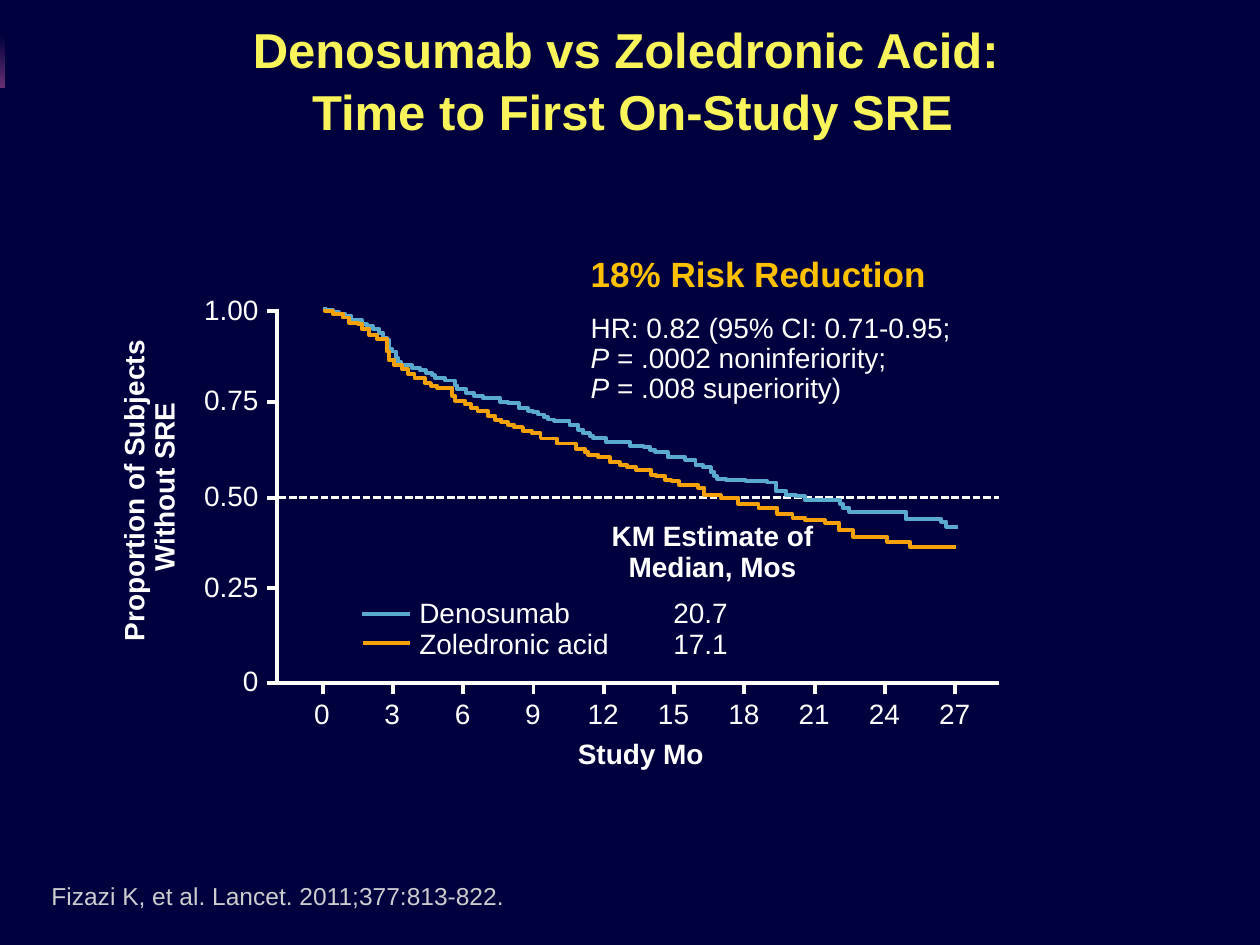
import pptx
import pptx.dml.color
import pptx.enum.dml
import pptx.enum.shapes
import pptx.enum.text
import pptx.oxml
import pptx.util
from pptx.util import Inches

RGBColor = pptx.dml.color.RGBColor
NAVY = RGBColor(0x00, 0x00, 0x3E)
PURPLE = RGBColor(0x68, 0x2E, 0x73)
YELLOW = RGBColor(0xF8, 0xF4, 0x5A)
GOLD = RGBColor(0xFF, 0xC0, 0x00)
WHITE = RGBColor(0xFF, 0xFF, 0xFF)
GRAY = RGBColor(0xCD, 0xCD, 0xCF)
BLUE = RGBColor(0x5A, 0xAA, 0xCE)
ORANGE = RGBColor(0xF6, 0xA1, 0x08)
LEFT = pptx.enum.text.PP_ALIGN.LEFT
CENTER = pptx.enum.text.PP_ALIGN.CENTER
RIGHT = pptx.enum.text.PP_ALIGN.RIGHT

AXIS_X, AXIS_Y, AXIS_END = 2.2, 5.42, 7.93
FIRST_TICK, TICK_STEP = 2.56, 0.558
PROPORTIONS = [("1.00", 2.47), ("0.75", 3.19), ("0.50", 3.95), ("0.25", 4.67), ("0", AXIS_Y)]
MONTHS = range(0, 28, 3)

DENOSUMAB_DROPS = [
    (2.58, 2.46), (2.64, 2.48), (2.69, 2.49), (2.74, 2.51), (2.79, 2.54), (2.87, 2.57),
    (2.91, 2.59), (2.96, 2.61), (3.01, 2.64), (3.04, 2.68), (3.07, 2.7), (3.09, 2.77),
    (3.11, 2.79), (3.14, 2.84), (3.16, 2.87), (3.18, 2.9), (3.27, 2.92), (3.33, 2.94),
    (3.38, 2.96), (3.43, 2.98), (3.45, 3), (3.53, 3.02), (3.61, 3.06), (3.63, 3.09),
    (3.7, 3.12), (3.76, 3.14), (3.83, 3.16), (3.97, 3.19), (4.03, 3.2), (4.12, 3.24),
    (4.19, 3.26), (4.23, 3.27), (4.27, 3.29), (4.32, 3.31), (4.35, 3.33), (4.4, 3.34),
    (4.52, 3.37), (4.59, 3.41), (4.63, 3.44), (4.68, 3.46), (4.71, 3.48), (4.81, 3.51),
    (5, 3.54), (5.11, 3.55), (5.16, 3.57), (5.2, 3.59), (5.3, 3.63), (5.44, 3.65),
    (5.52, 3.69), (5.58, 3.71), (5.64, 3.75), (5.67, 3.78), (5.69, 3.8), (5.76, 3.81),
    (5.92, 3.82), (6.09, 3.83), (6.16, 3.9), (6.24, 3.93), (6.32, 3.94), (6.39, 3.97),
    (6.67, 4), (6.69, 4.03), (6.74, 4.06), (7.19, 4.12), (7.47, 4.14), (7.51, 4.18),
]
ZOLEDRONIC_DROPS = [
    (2.58, 2.47), (2.64, 2.49), (2.72, 2.52), (2.77, 2.56), (2.84, 2.57), (2.87, 2.61),
    (2.93, 2.66), (2.99, 2.69), (3.07, 2.79), (3.09, 2.86), (3.13, 2.9), (3.19, 2.93),
    (3.24, 2.97), (3.29, 3), (3.37, 3.04), (3.42, 3.06), (3.47, 3.08), (3.59, 3.14),
    (3.61, 3.18), (3.69, 3.21), (3.74, 3.24), (3.79, 3.26), (3.87, 3.3), (3.93, 3.33),
    (3.98, 3.35), (4.03, 3.37), (4.08, 3.39), (4.15, 3.42), (4.22, 3.44), (4.29, 3.48),
    (4.42, 3.52), (4.57, 3.56), (4.64, 3.59), (4.67, 3.61), (4.75, 3.63), (4.84, 3.67),
    (4.92, 3.69), (4.98, 3.71), (5.05, 3.73), (5.17, 3.77), (5.21, 3.78), (5.28, 3.81),
    (5.33, 3.82), (5.39, 3.85), (5.54, 3.87), (5.59, 3.93), (5.72, 3.95), (5.86, 4),
    (6.02, 4.03), (6.17, 4.08), (6.29, 4.11), (6.39, 4.13), (6.55, 4.15), (6.66, 4.21),
    (6.77, 4.26), (7.04, 4.3), (7.22, 4.34),
]


class SlideBuilder:
    font_name = "Arial"
    font_size = 16
    line_width = 2.25

    def __init__(self, page):
        self.page = page

    def style(self, para, size, color, bold=False, align=LEFT, spacing=0.9):
        para.alignment = align
        para.line_spacing = spacing
        para.font.name = self.font_name
        para.font.size = pptx.util.Pt(size)
        para.font.bold = bold
        para.font.color.rgb = color

    def text(self, left, top, width, height, words, size=font_size, color=WHITE,
             bold=False, align=LEFT, spacing=0.9, wrap=False):
        box = self.page.shapes.add_textbox(*map(Inches, (left, top, width, height)))
        box.text_frame.word_wrap = wrap
        para = box.text_frame.paragraphs[0]
        para.text = words
        self.style(para, size, color, bold, align, spacing)
        return box

    def line(self, start, end, color=WHITE, width=line_width, dash=None):
        line = self.page.shapes.add_connector(
            pptx.enum.shapes.MSO_CONNECTOR.STRAIGHT, *map(Inches, (*start, *end)))
        line.line.color.rgb = color
        line.line.width = pptx.util.Pt(width)
        if dash:
            line.line.dash_style = dash
        line._element.spPr.append(pptx.oxml.parse_xml(
            '<a:effectLst xmlns:a="http://schemas.openxmlformats.org/drawingml/2006/main"/>'))

    def gradient_band(self, left, top, width, height):
        band = self.page.shapes.add_shape(
            pptx.enum.shapes.MSO_SHAPE.RECTANGLE, *map(Inches, (left, top, width, height)))
        band.shadow.inherit = False
        band.line.fill.background()
        band.fill.gradient()
        band.fill.gradient_angle = 90
        for stop, position, color in zip(band.fill.gradient_stops, (0, 0.6), (PURPLE, NAVY)):
            stop.position = position
            stop.color.rgb = color

    def survival_curve(self, start, drops, end_x, color):
        level = start[1]
        points = []
        for x, lower in drops:
            points += [(x, level), (x, lower)]
            level = lower
        points.append((end_x, level))
        outline = self.page.shapes.build_freeform(Inches(start[0]), Inches(start[1]))
        outline.add_line_segments([(Inches(x), Inches(y)) for x, y in points], close=False)
        curve = outline.convert_to_shape()
        curve.shadow.inherit = False
        curve.fill.background()
        curve.line.color.rgb = color
        curve.line.width = pptx.util.Pt(self.line_width)

    def risk_summary(self):
        box = self.text(4.59, 1.99, 3.1, 1.31, "18% Risk Reduction", 20, GOLD, True)
        box.text_frame.paragraphs[0].space_after = pptx.util.Pt(5)
        para = box.text_frame.add_paragraph()
        para.space_before = pptx.util.Pt(6)
        para.add_run().text = "HR: 0.82 (95% CI: 0.71-0.95;"
        for result in (" = .0002 noninferiority;", " = .008 superiority)"):
            para.add_line_break()
            span = para.add_run()
            span.text = "P"
            span.font.italic = True
            para.add_run().text = result
        self.style(para, self.font_size, WHITE)


def main():
    deck = pptx.Presentation()
    deck.slide_width, deck.slide_height = Inches(10), Inches(7.5)
    page = deck.slides.add_slide(deck.slide_layouts[6])
    page.background.fill.solid()
    page.background.fill.fore_color.rgb = NAVY
    builder = SlideBuilder(page)

    builder.gradient_band(0, 0, 10, 0.7)
    title = builder.text(0.04, 0.02, 9.96, 1.21,
                         "Denosumab vs Zoledronic Acid: \vTime to First On-Study SRE",
                         28, YELLOW, True, CENTER, 1.05, True)
    title.text_frame.vertical_anchor = pptx.enum.text.MSO_ANCHOR.MIDDLE
    title.fill.solid()
    title.fill.fore_color.rgb = NAVY

    builder.line((AXIS_X, 2.45), (AXIS_X, 5.44))
    builder.line((AXIS_X - 0.01, AXIS_Y), (AXIS_END, AXIS_Y))
    for label, y in PROPORTIONS:
        builder.line((2.12, y), (2.18, y))
        builder.text(1.51, y - 0.17, 0.64, 0.34, label, align=RIGHT)
    for index, month in enumerate(MONTHS):
        x = FIRST_TICK + index * TICK_STEP
        builder.line((x, 5.44), (x, 5.51))
        builder.text(x - 0.23, 5.51, 0.45, 0.34, str(month), align=CENTER)

    axis_title = builder.text(-0.14, 3.57, 2.68, 0.59, "Proportion of Subjects \vWithout SRE",
                              bold=True, align=CENTER)
    axis_title.rotation = 270
    builder.text(2.21, 5.83, 5.75, 0.34, "Study Mo", bold=True, align=CENTER, wrap=True)

    builder.line((2.87, 4.87), (3.25, 4.87), BLUE)
    builder.line((2.88, 5.1), (3.25, 5.1), ORANGE)
    builder.text(3.23, 4.71, 1.72, 0.59, "Denosumab\vZoledronic acid")
    builder.risk_summary()
    builder.text(4.74, 4.1, 1.83, 0.59, "KM Estimate of\vMedian, Mos", bold=True, align=CENTER)
    builder.text(5.24, 4.71, 0.64, 0.59, "20.7\v17.1", align=CENTER)

    builder.line((2.21, 3.95), (AXIS_END, 3.95), width=1.5,
                 dash=pptx.enum.dml.MSO_LINE.SQUARE_DOT)
    builder.survival_curve((2.58, 2.44), DENOSUMAB_DROPS, 7.6, BLUE)
    builder.survival_curve((2.58, 2.45), ZOLEDRONIC_DROPS, 7.59, ORANGE)
    builder.text(0.31, 6.94, 4.05, 0.34, "Fizazi K, et al. Lancet. 2011;377:813-822.",
                 14, GRAY, spacing=1.0, wrap=True)
    deck.save("out.pptx")


if __name__ == "__main__":
    main()
